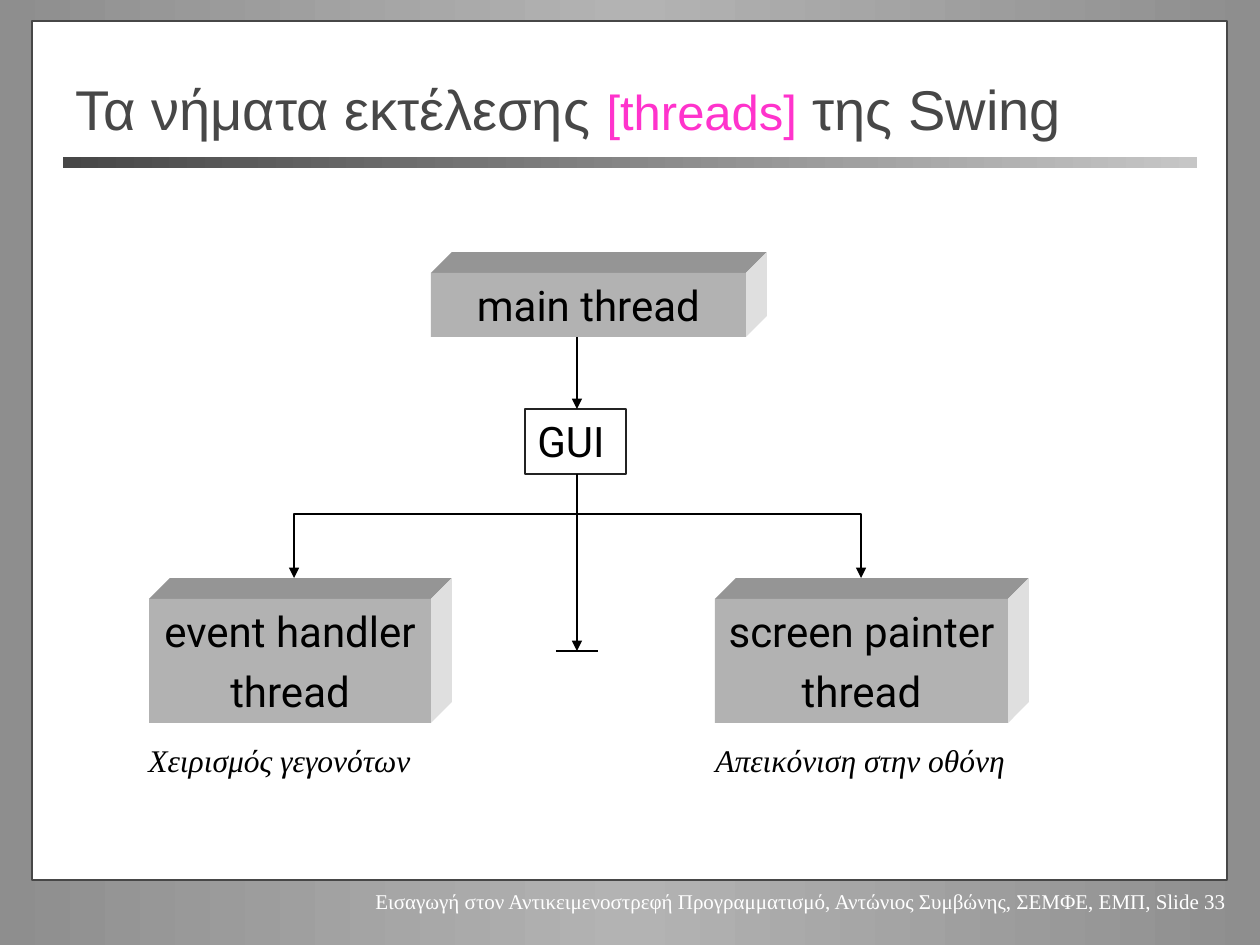
from copy import deepcopy

from lxml.etree import SubElement
from pptx import Presentation
from pptx.dml.color import RGBColor
from pptx.enum.shapes import MSO_CONNECTOR as LINE, MSO_SHAPE as SHAPE
from pptx.enum.text import MSO_ANCHOR as ANCHOR, PP_ALIGN as ALIGN
from pptx.oxml.ns import qn
from pptx.util import Pt

# Content: lengths in px, 126 to the inch
COLORS = {
    "edge": "8E8E8E", "middle": "B3B3B3", "white": "FFFFFF", "black": "000000",
    "dark": "474747", "pale": "C6C6C6", "pink": "FF33CC", "frame": "232323",
    "front": "B2B2B2", "top": "959595", "side": "DFDFDF",
}
TITLE = [("Τα νήματα εκτέλεσης ", 32, "dark"), ("[threads]", 28, "pink"),
         (" της Swing", 32, "dark")]
FOOTER = "Εισαγωγή στον Αντικειμενοστρεφή Προγραμματισμό, Αντώνιος Συμβώνης, ΣΕΜΦΕ, ΕΜΠ, Slide 33"
BLOCKS = [  # front face and its lines of text
    ((431, 273, 315, 64), ["main thread"]),
    ((149, 599, 282, 124), ["event handler", "thread"]),
    ((715, 599, 293, 124), ["screen painter", "thread"]),
]
CAPTIONS = [((136, 735, 288, 50), "Χειρισμός γεγονότων"),
            ((703, 735, 315, 50), "Απεικόνιση στην οθόνη")]
GUI_BOX = (525, 409, 101, 65)
DEPTH = 21
TRUNK_X, FORK_Y, END_Y = 577, 514, 651
BRANCH_XS = (861, 294)

SCALE = 914400 / 126


def px(*lengths):
    return [round(length * SCALE) for length in lengths]


def rgb(name):
    return RGBColor.from_string(COLORS[name])


def add_run(para, text, size, font, color, italic=False):
    span = para.add_run()
    span.text = text
    span.font.size = Pt(size)
    span.font.name = font
    span.font.italic = italic
    span.font.color.rgb = rgb(color)


def write(box, lines, size, font, color, align=ALIGN.LEFT, italic=False):
    frame = box.text_frame
    frame.word_wrap = False
    frame.vertical_anchor = ANCHOR.TOP
    for index, text in enumerate(lines):
        para = frame.add_paragraph() if index else frame.paragraphs[0]
        para.alignment = align
        para.space_before = Pt(size * 0.23 if index else 0)
        add_run(para, text, size, font, color, italic)


def paint(shape, fill=None, line=None):
    shape.shadow.inherit = False
    if fill:
        shape.fill.solid()
        shape.fill.fore_color.rgb = rgb(fill)
    else:
        shape.fill.background()
    if line:
        shape.line.color.rgb = rgb(line)
        shape.line.width = Pt(1)
    else:
        shape.line.fill.background()


def blend(fill, first, last):
    fill.gradient()
    fill.gradient_angle = 0
    for stop, color, place in zip(fill.gradient_stops, (first, last), (0, 1)):
        stop.color.rgb = rgb(color)
        stop.position = place


def add_rect(page, area, fill=None, line=None):
    box = page.shapes.add_shape(SHAPE.RECTANGLE, *px(*area))
    paint(box, fill, line)
    return box


def add_outline(page, points, fill=None, line=None):
    builder = page.shapes.build_freeform(*points[0], scale=SCALE)
    builder.add_line_segments(points[1:], close=fill is not None)
    shape = builder.convert_to_shape()
    paint(shape, fill, line)
    return shape


def add_arrowhead(shape):
    SubElement(shape.line._get_or_add_ln(), qn("a:tailEnd"), type="triangle")


def add_line(page, start, end, arrow=True):
    line = page.shapes.add_connector(LINE.STRAIGHT, *px(*start, *end))
    line.line.color.rgb = rgb("black")
    line.line.width = Pt(1)
    if arrow:
        add_arrowhead(line)
    SubElement(line.element.spPr, qn("a:effectLst"))


def add_block(page, area, lines):
    left, top, width, height = area
    right, bottom = left + width, top + height
    back_right, back_top = right + DEPTH, top - DEPTH
    add_outline(page, [(left, top), (left + DEPTH, back_top),
                       (back_right, back_top), (right, top)], "top")
    add_outline(page, [(right, top), (back_right, back_top),
                       (back_right, bottom - DEPTH), (right, bottom)], "side")
    front = add_rect(page, area, "front")
    write(front, lines, 24, "Roboto", "black", ALIGN.CENTER)


def main():
    deck = Presentation()
    deck.slide_width, deck.slide_height = px(1260, 945)
    page = deck.slides.add_slide(deck.slide_layouts[5])

    # Background: dark at both sides, light in the middle
    blend(page.background.fill, "edge", "middle")
    stops = next(page.element.iter(qn("a:gsLst")))
    stops.append(deepcopy(stops[0]))
    for stop, place in zip(stops, (0, 50000, 100000)):
        stop.set("pos", str(place))

    # Panel, rule and footer
    add_rect(page, (32, 21, 1195, 859), "white", "dark")
    rule = add_rect(page, (63, 157, 1134, 11))
    blend(rule.fill, "dark", "pale")
    footer = page.shapes.add_textbox(*px(314, 882, 925, 63))
    write(footer, [FOOTER], 12, "Times New Roman", "white", ALIGN.RIGHT)

    # Title, brought in front of the panel
    title = page.shapes.title
    title.left, title.top, title.width, title.height = px(63, 69, 1103, 78)
    title.element.getparent().append(title.element)
    title.text_frame.vertical_anchor = ANCHOR.MIDDLE
    title.text_frame.word_wrap = True
    para = title.text_frame.paragraphs[0]
    para.alignment = ALIGN.LEFT
    for text, size, color in TITLE:
        add_run(para, text, size, "Arial", color)

    # Threads and GUI
    for area, lines in BLOCKS:
        add_block(page, area, lines)
    gui = add_rect(page, GUI_BOX, line="frame")
    write(gui, ["GUI"], 24, "Roboto", "black")

    # Arrows
    gui_top, gui_bottom = GUI_BOX[1], GUI_BOX[1] + GUI_BOX[3]
    add_line(page, (TRUNK_X, 337), (TRUNK_X, gui_top))
    for x in BRANCH_XS:
        branch = add_outline(page, [(TRUNK_X, gui_bottom), (TRUNK_X, FORK_Y),
                                    (x, FORK_Y), (x, 578)], line="black")
        add_arrowhead(branch)
    add_line(page, (TRUNK_X, FORK_Y), (TRUNK_X, END_Y))
    add_line(page, (TRUNK_X - 21, END_Y), (TRUNK_X + 21, END_Y), arrow=False)

    # Captions
    for area, text in CAPTIONS:
        caption = page.shapes.add_textbox(*px(*area))
        write(caption, [text], 18, "Times New Roman", "black", italic=True)

    deck.save("out.pptx")


if __name__ == "__main__":
    main()
